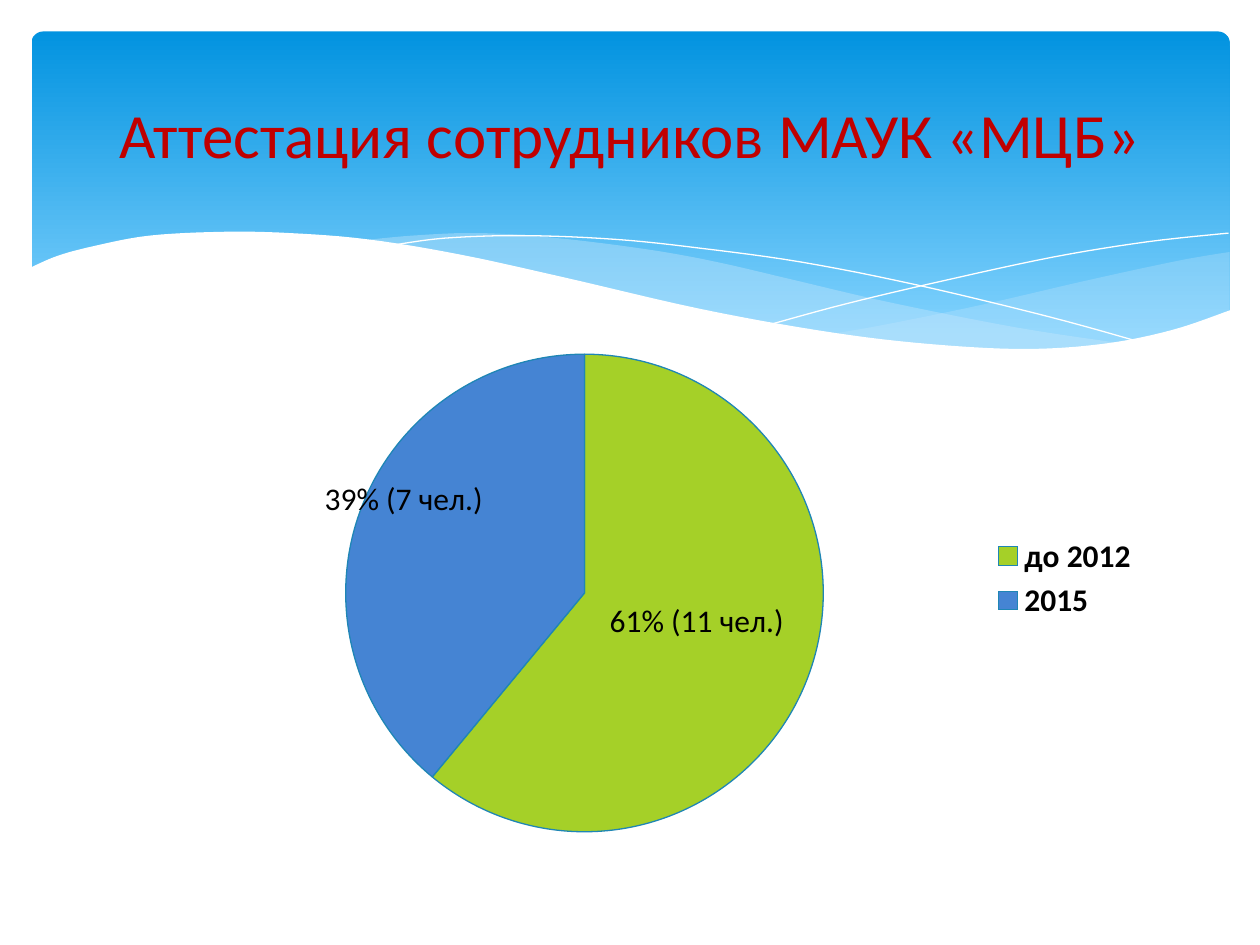
from dataclasses import dataclass
from typing import Optional

from lxml import etree
from pptx import Presentation
from pptx.chart.data import CategoryChartData
from pptx.dml.color import RGBColor
from pptx.enum.chart import XL_CHART_TYPE as ChartType
from pptx.enum.chart import XL_LABEL_POSITION as LabelPosition
from pptx.enum.chart import XL_LEGEND_POSITION as LegendPosition
from pptx.enum.shapes import MSO_SHAPE as Preset
from pptx.enum.text import MSO_ANCHOR as Anchor
from pptx.enum.text import PP_ALIGN as Align
from pptx.oxml.ns import qn
from pptx.util import Inches, Pt

COLORS = {
    "sky": "0293E0", "haze": "83D3FE", "mist": "C6E7FC", "white": "FFFFFF",
    "title": "C00000", "text": "000000", "edge": "1F86B5",
    "before": "A5D028", "after": "4584D3",
}
FONT = "Calibri"
COLUMNS, ROWS = 10, 7.5  # grid of one-inch cells
CELL = Inches(1)
Point = tuple[float, float]


@dataclass
class Wave:
    edges: list[list[Point]]  # each edge is a smooth curve through its points
    color: str
    alpha: Optional[int] = None  # opacity in percent
    filled: bool = True


@dataclass
class Share:
    category: str
    percent: int
    label: str
    color: str
    nudge: Point  # label offset as shares of the chart


WAVES = [
    Wave([[(9.76, 2), (9.35, 2.07), (8.61, 2.23), (7.79, 2.42), (7.06, 2.57), (6.61, 2.65)],
          [(6.61, 2.65), (7.19, 2.72), (7.69, 2.77), (8.14, 2.78), (8.63, 2.75),
           (9.13, 2.67), (9.49, 2.57), (9.76, 2.47)]], "mist", 29),
    Wave([[(8.93, 2.73), (8.07, 2.6), (7.06, 2.4), (6.29, 2.22), (5.69, 2.08),
           (5.14, 1.98), (4.42, 1.89), (3.8, 1.85), (3.28, 1.87), (2.86, 1.91)],
          [(2.86, 1.91), (3.62, 2.03), (4.49, 2.22), (5.3, 2.4), (6.01, 2.55),
           (6.8, 2.68), (7.48, 2.76), (8.07, 2.78), (8.57, 2.77), (8.93, 2.73)]], "mist", 40),
    Wave([[(3.09, 1.95), (3.53, 1.89), (4.16, 1.87), (4.89, 1.9), (5.56, 1.97),
           (6.36, 2.08), (7.27, 2.26), (8.31, 2.51), (9.07, 2.72)]], "white", filled=False),
    Wave([[(6.13, 2.57), (6.72, 2.41), (7.48, 2.23), (8.36, 2.04), (9.1, 1.92),
           (9.75, 1.85)]], "white", filled=False),
    Wave([[(9.77, 2.46), (9.3, 2.62), (8.75, 2.73), (8.09, 2.77), (7.26, 2.72),
           (6.48, 2.62), (5.55, 2.45), (4.47, 2.2), (3.65, 2.02), (2.92, 1.9),
           (2.3, 1.85), (1.77, 1.84), (1.19, 1.87), (0.76, 1.95), (0.46, 2.03), (0.23, 2.13)],
          [(0.23, 3.29), (9.77, 3.29)]], "white"),
]
SHARES = [
    Share("до 2012", 61, "61% (11 чел.)", "before", (0, -0.02)),
    Share("2015", 39, "39% (7 чел.)", "after", (-0.07, -0.09)),
]


def rgb(name: str) -> RGBColor:
    return RGBColor.from_string(COLORS[name])


def cells(*lengths: float) -> list[int]:
    return [round(length * CELL) for length in lengths]


def smooth(points: list[Point], steps: int = 6) -> list[Point]:
    """Catmull-Rom curve through the points."""
    if len(points) < 3:
        return points
    padded = [points[0], *points, points[-1]]
    curve = [points[0]]
    for a, b, c, d in zip(padded, padded[1:], padded[2:], padded[3:]):
        for step in range(1, steps + 1):
            t = step / steps
            curve.append(tuple(
                (2 * q + (r - p) * t + (2 * p - 5 * q + 4 * r - s) * t ** 2
                 + (3 * q - p - 3 * r + s) * t ** 3) / 2
                for p, q, r, s in zip(a, b, c, d)))
    return curve


def draw_banner(slide) -> None:
    banner = slide.shapes.add_shape(Preset.ROUNDED_RECTANGLE, *cells(0.25, 0.25, 9.51, 2.7))
    banner.adjustments[0] = 0.034
    banner.shadow.inherit = False
    banner.line.fill.background()
    banner.fill.gradient()
    banner.fill.gradient_angle = 270
    for stop, color, position in zip(banner.fill.gradient_stops, ("sky", "haze"), (0, 0.9)):
        stop.color.rgb = rgb(color)
        stop.position = position


def draw_wave(slide, wave: Wave) -> None:
    outline = [cells(*point) for edge in wave.edges for point in smooth(edge)]
    builder = slide.shapes.build_freeform(*outline[0])
    builder.add_line_segments(outline[1:], close=wave.filled)
    shape = builder.convert_to_shape()
    shape.shadow.inherit = False
    if not wave.filled:
        shape.fill.background()
        shape.line.color.rgb = rgb(wave.color)
        shape.line.width = 0
        return
    shape.line.fill.background()
    shape.fill.solid()
    shape.fill.fore_color.rgb = rgb(wave.color)
    if wave.alpha is not None:
        color = shape.fill._xPr.find(qn("a:solidFill"))[0]
        etree.SubElement(color, qn("a:alpha")).set("val", str(wave.alpha * 1000))


def manual_layout(**values) -> etree._Element:
    layout = etree.Element(qn("c:layout"))
    manual = etree.SubElement(layout, qn("c:manualLayout"))
    for tag, value in values.items():
        etree.SubElement(manual, qn(f"c:{tag}")).set("val", str(value))
    return layout


def draw_pie(slide, shares: list[Share]) -> None:
    data = CategoryChartData()
    data.categories = [share.category for share in shares]
    data.add_series("Аттестация", [share.percent for share in shares])
    chart = slide.shapes.add_chart(ChartType.PIE, *cells(1.38, 2.25, 7.76, 4.68), data).chart
    chart.has_title = False
    chart.font.name, chart.font.size = FONT, Pt(18)
    chart.font.color.rgb = rgb("text")
    chart.has_legend = True
    chart.legend.position = LegendPosition.RIGHT
    chart.legend.include_in_layout = False
    chart.legend.font.bold = True

    # Fixed place of the pie inside the chart
    plot_area = chart._chartSpace.chart.plotArea
    for automatic in plot_area.findall(qn("c:layout")):
        plot_area.remove(automatic)
    plot_area.insert(0, manual_layout(layoutTarget="inner", xMode="edge", yMode="edge",
                                      x=0.07, y=0.12, w=0.7, h=0.81))

    # Slices and their labels
    chart.plots[0].vary_by_categories = True
    series = chart.plots[0].series[0]
    for index, share in enumerate(shares):
        slice_ = series.points[index]
        slice_.format.fill.solid()
        slice_.format.fill.fore_color.rgb = rgb(share.color)
        slice_.format.line.color.rgb = rgb("edge")
        slice_.format.line.width = Pt(0.75)
        label = slice_.data_label
        label.text_frame.text = share.label
        font = label.text_frame.paragraphs[0].font
        font.name, font.size, font.bold = FONT, Pt(18), False
        font.color.rgb = rgb("text")
        label.position = LabelPosition.CENTER
        x, y = share.nudge
        label._dLbl.find(qn("c:idx")).addnext(manual_layout(x=x, y=y))


def write_title(slide, text: str) -> None:
    title = slide.shapes.title
    title.left, title.top, title.width, title.height = cells(0.5, 0.37, COLUMNS - 1, 1.37)
    title.text_frame.text = text
    title.text_frame.vertical_anchor = Anchor.MIDDLE
    line = title.text_frame.paragraphs[0]
    line.alignment = Align.CENTER
    line.font.name, line.font.size = FONT, Pt(36)
    line.font.color.rgb = rgb("title")
    slide.shapes._spTree.append(title._element)  # in front of the banner


def main() -> None:
    deck = Presentation()
    deck.slide_width, deck.slide_height = cells(COLUMNS, ROWS)
    slide = deck.slides.add_slide(deck.slide_layouts[5])
    draw_banner(slide)
    for wave in WAVES:
        draw_wave(slide, wave)
    draw_pie(slide, SHARES)
    write_title(slide, "Аттестация сотрудников МАУК «МЦБ»")
    deck.save("out.pptx")


if __name__ == "__main__":
    main()
